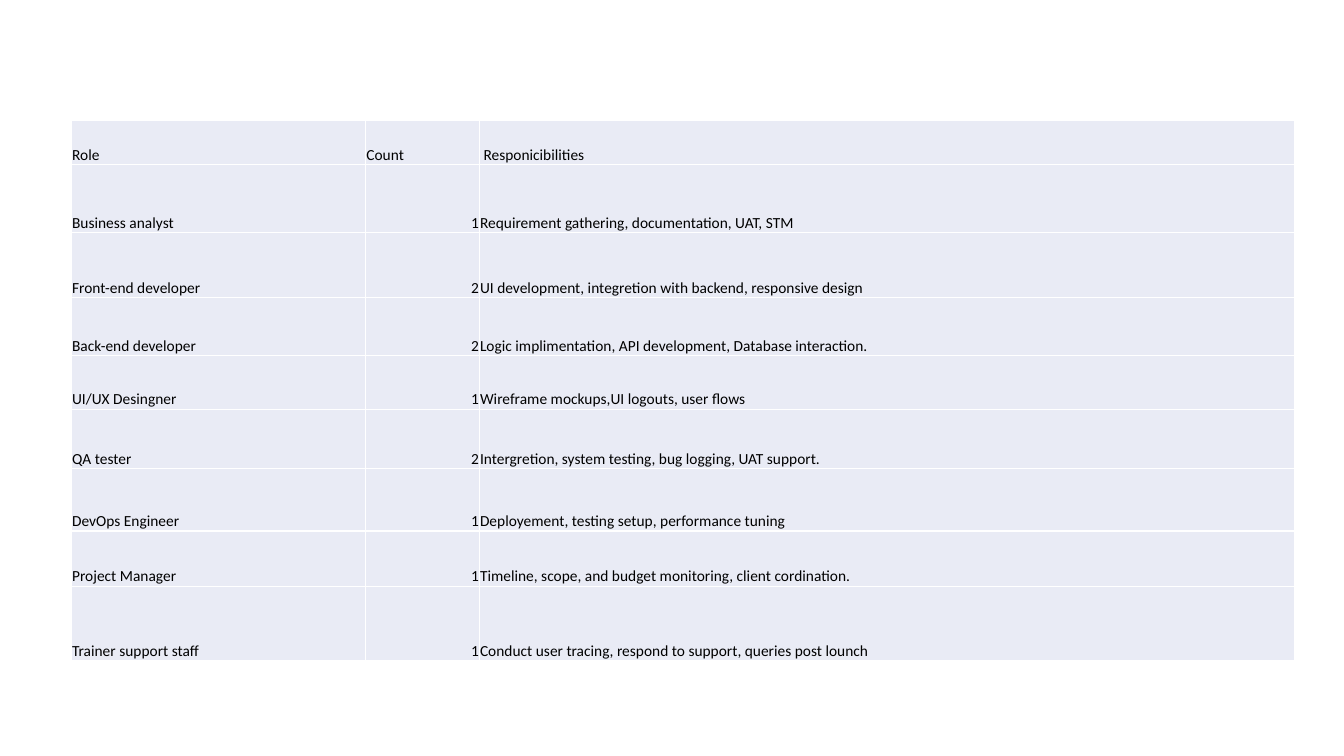
from lxml import etree
from pptx import Presentation
from pptx.dml.color import RGBColor
from pptx.enum.text import MSO_ANCHOR, PP_ALIGN
from pptx.oxml.ns import qn
from pptx.util import Pt

BOTTOM = MSO_ANCHOR.BOTTOM
LEFT, RIGHT = PP_ALIGN.LEFT, PP_ALIGN.RIGHT

BLACK = RGBColor(0x00, 0x00, 0x00)
WHITE = RGBColor(0xFF, 0xFF, 0xFF)
PALE_BLUE = RGBColor(0xE9, 0xEB, 0xF5)

BLANK_LAYOUT = 6

# Team roles: name, head count, duties
HEADINGS = ("Role", "Count", " Responicibilities")
TEAM = [
    ("Business analyst", 1, "Requirement gathering, documentation, UAT, STM"),
    ("Front-end developer", 2, "UI development, integretion with backend, responsive design"),
    ("Back-end developer", 2, "Logic implimentation, API development, Database interaction."),
    ("UI/UX Desingner", 1, "Wireframe mockups,UI logouts, user flows"),
    ("QA tester", 2, "Intergretion, system testing, bug logging, UAT support."),
    ("DevOps Engineer", 1, "Deployement, testing setup, performance tuning"),
    ("Project Manager", 1, "Timeline, scope, and budget monitoring, client cordination."),
    ("Trainer support staff", 1, "Conduct user tracing, respond to support, queries post lounch"),
]
COLUMN_WIDTHS = (210.2, 81.2, 582.6)
ROW_HEIGHTS = (31.5, 48.2, 46.6, 41.5, 38.3, 42.4, 44.7, 39.4, 53.2)


class SlideBuilder:
    """Holds the table style and the slide being filled."""

    font_name = "Calibri"
    font_size = Pt(11)
    padding = Pt(0.4)
    border_width = Pt(1)

    def __init__(self, slide):
        self.slide = slide

    def add_table(self, left, top, widths, heights, rows):
        frame = self.slide.shapes.add_table(
            len(heights), len(widths), Pt(left), Pt(top), Pt(sum(widths)), Pt(sum(heights)))
        table = frame.table
        table.first_row = table.horz_banding = False
        for column, width in zip(table.columns, widths):
            column.width = Pt(width)
        for row, height, values in zip(table.rows, heights, rows):
            row.height = Pt(height)
            for cell, value in zip(row.cells, values):
                self.fill_cell(cell, value)

    def fill_cell(self, cell, value):
        cell.margin_left = cell.margin_right = cell.margin_top = self.padding
        cell.margin_bottom = 0
        cell.vertical_anchor = BOTTOM
        self.add_borders(cell)
        cell.fill.solid()
        cell.fill.fore_color.rgb = PALE_BLUE

        # Numbers stand at the right edge, words at the left
        cell.text = str(value)
        paragraph = cell.text_frame.paragraphs[0]
        paragraph.alignment = RIGHT if isinstance(value, int) else LEFT
        paragraph.font.name = self.font_name
        paragraph.font.size = self.font_size
        paragraph.font.color.rgb = BLACK

    def add_borders(self, cell):
        properties = cell._tc.get_or_add_tcPr()
        for side in ("a:lnL", "a:lnR", "a:lnT", "a:lnB"):
            line = etree.SubElement(properties, qn(side), w=str(self.border_width))
            fill = etree.SubElement(line, qn("a:solidFill"))
            etree.SubElement(fill, qn("a:srgbClr"), val=str(WHITE))


def main():
    presentation = Presentation()
    presentation.slide_width, presentation.slide_height = Pt(960), Pt(540)
    slide = presentation.slides.add_slide(presentation.slide_layouts[BLANK_LAYOUT])

    # Role table
    builder = SlideBuilder(slide)
    builder.add_table(51.1, 86.2, COLUMN_WIDTHS, ROW_HEIGHTS, [HEADINGS, *TEAM])

    presentation.save("out.pptx")


if __name__ == "__main__":
    main()
